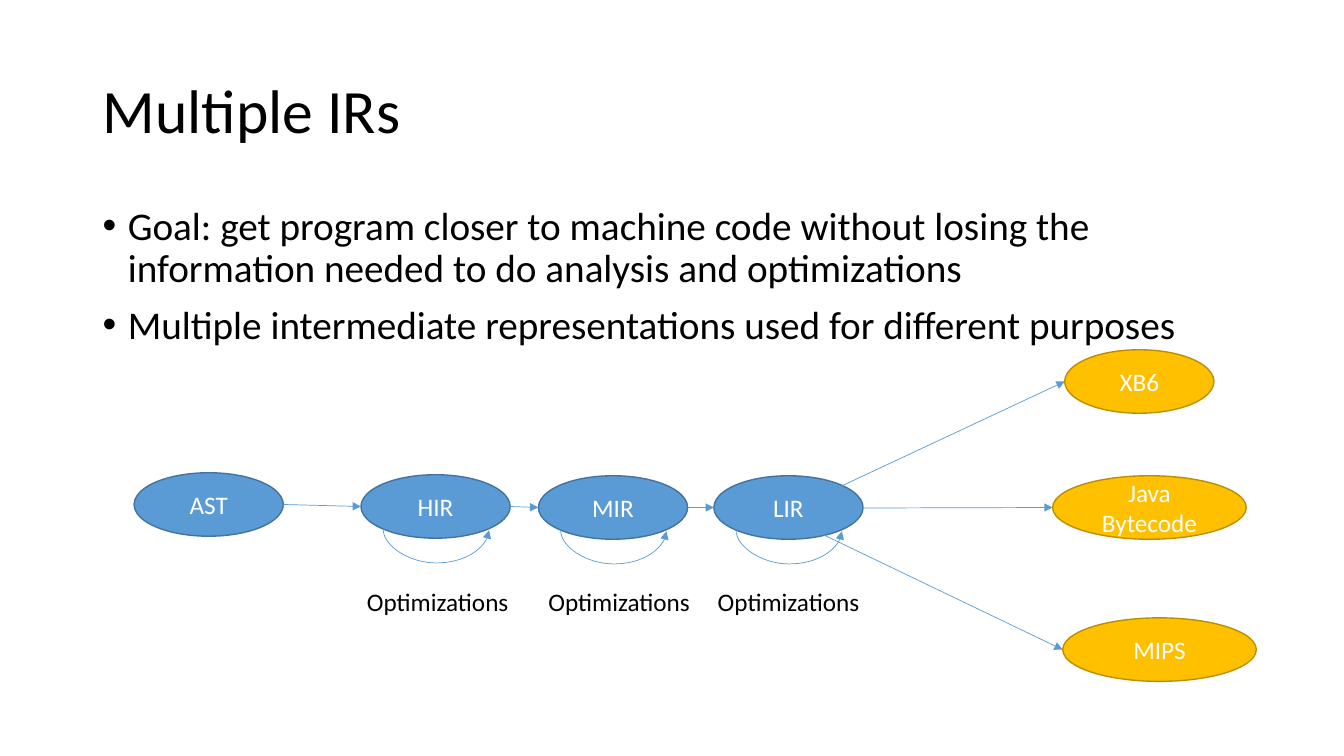
from lxml import etree
from pptx import Presentation
from pptx import util as u
from pptx.dml.color import RGBColor
from pptx.enum import shapes, text
from pptx.oxml.ns import qn

FONT = "Calibri"
BLUE, BLUE_EDGE = "5B9BD5", "43739E"
GOLD, GOLD_EDGE = "FFC000", "BD8E00"
BLACK, WHITE = "000000", "FFFFFF"
NODE_HEIGHT = 0.63
NODE_WIDTH = 1.48


def color(value):
    return RGBColor.from_string(value)


def inches(*lengths):
    return [u.Inches(length) for length in lengths]


def format_paragraph(paragraph, size, font_color, alignment=text.PP_ALIGN.LEFT):
    paragraph.font.name = FONT
    paragraph.font.size = u.Pt(size)
    paragraph.font.color.rgb = color(font_color)
    paragraph.alignment = alignment


def add_title(slide, box, wording):
    title = slide.shapes.title
    title.left, title.top, title.width, title.height = inches(*box)
    title.text_frame.text = wording
    title.text_frame.vertical_anchor = text.MSO_ANCHOR.MIDDLE
    paragraph = title.text_frame.paragraphs[0]
    format_paragraph(paragraph, 44, BLACK)
    paragraph.line_spacing = 0.9


def add_bullets(slide, box, points):
    frame = slide.shapes.add_textbox(*inches(*box)).text_frame
    frame.word_wrap = True
    frame.text = "\n".join(points)
    for paragraph in frame.paragraphs:
        format_paragraph(paragraph, 28, BLACK)
        paragraph.line_spacing = 0.9
        paragraph.space_before = u.Pt(10)
        properties = paragraph._p.get_or_add_pPr()
        properties.set("marL", str(u.Inches(0.25)))
        properties.set("indent", str(-u.Inches(0.25)))
        etree.SubElement(properties, qn("a:buFont"), typeface="Arial")
        etree.SubElement(properties, qn("a:buChar"), char="•")


def add_node(slide, box, wording, fill, edge):
    node = slide.shapes.add_shape(shapes.MSO_SHAPE.OVAL, *inches(*box))
    node.shadow.inherit = False
    node.fill.solid()
    node.fill.fore_color.rgb = color(fill)
    node.line.color.rgb = color(edge)
    node.line.width = u.Pt(1)
    node.text_frame.text = wording
    node.text_frame.vertical_anchor = text.MSO_ANCHOR.MIDDLE
    format_paragraph(node.text_frame.paragraphs[0], 18, WHITE, text.PP_ALIGN.CENTER)


def add_arrow(slide, start, end, kind=shapes.MSO_CONNECTOR.STRAIGHT):
    arrow = slide.shapes.add_connector(kind, *inches(*start, *end))
    arrow.line.color.rgb = color(BLUE)
    arrow.line.width = u.Pt(0.5)
    etree.SubElement(arrow.line._get_or_add_ln(), qn("a:tailEnd"), type="triangle")
    etree.SubElement(arrow._element.spPr, qn("a:effectLst"))
    return arrow


def add_loop(slide, left, top):
    span, rise, depth = 1.05, 0.01, 0.34
    center_x, center_y = left + span / 2, top + rise / 2
    loop = add_arrow(
        slide,
        (center_x - rise / 2, center_y - span / 2),
        (center_x + rise / 2, center_y + span / 2),
        shapes.MSO_CONNECTOR.CURVE,
    )
    properties = loop._element.spPr
    frame = properties.find(qn("a:xfrm"))
    frame.set("rot", str(270 * 60000))
    frame.set("flipH", "1")
    geometry = properties.find(qn("a:prstGeom"))
    guides = geometry.find(qn("a:avLst"))
    if guides is None:
        guides = etree.SubElement(geometry, qn("a:avLst"))
    bend = round(depth / rise * 100000)
    etree.SubElement(guides, qn("a:gd"), name="adj1", fmla=f"val {bend}")


def add_caption(slide, box, wording):
    frame = slide.shapes.add_textbox(*inches(*box)).text_frame
    frame.word_wrap = True
    frame.auto_size = text.MSO_AUTO_SIZE.SHAPE_TO_FIT_TEXT
    frame.text = wording
    format_paragraph(frame.paragraphs[0], 18, BLACK)


def add_pipeline(slide, left, top):
    stages = [
        ("AST", 0, 0, None),
        ("HIR", 2.25, 0.02, 2.21),
        ("MIR", 4.01, 0.03, 4.01),
        ("LIR", 5.75, 0.03, 5.69),
    ]
    previous_end = None
    for name, offset_x, offset_y, caption_x in stages:
        x, y = left + offset_x, top + offset_y
        middle = y + NODE_HEIGHT / 2
        add_node(slide, (x, y, NODE_WIDTH, NODE_HEIGHT), name, BLUE, BLUE_EDGE)
        if previous_end:
            add_arrow(slide, previous_end, (x, middle))
        if caption_x is not None:
            add_loop(slide, x + 0.22, y + 0.54)
            add_caption(slide, (left + caption_x, top + 1.08, 1.68, 0.4), "Optimizations")
        previous_end = (x + NODE_WIDTH, middle)


def add_targets(slide, left, top):
    targets = [
        ("XB6", 0.12, 0, NODE_WIDTH, (8.35, 4.82)),
        ("Java Bytecode", 0, 1.25, 1.92, (8.56, 5.04)),
        ("MIPS", 0.1, 2.66, 1.92, (8.01, 5.23)),
    ]
    for name, offset_x, offset_y, width, source in targets:
        x, y = left + offset_x, top + offset_y
        add_node(slide, (x, y, width, NODE_HEIGHT), name, GOLD, GOLD_EDGE)
        add_arrow(slide, source, (x, y + NODE_HEIGHT / 2))


def main():
    presentation = Presentation()
    presentation.slide_width, presentation.slide_height = inches(13.33, 7.5)
    slide = presentation.slides.add_slide(presentation.slide_layouts.get_by_name("Title Only"))
    add_title(slide, (0.92, 0.4, 11.5, 1.45), "Multiple IRs")
    add_bullets(slide, (0.92, 2, 11.5, 2), [
        "Goal: get program closer to machine code without losing the "
        "information needed to do analysis and optimizations",
        "Multiple intermediate representations used for different purposes",
    ])
    add_pipeline(slide, 1.33, 4.69)
    add_targets(slide, 10.44, 3.47)
    presentation.save("out.pptx")


if __name__ == "__main__":
    main()
